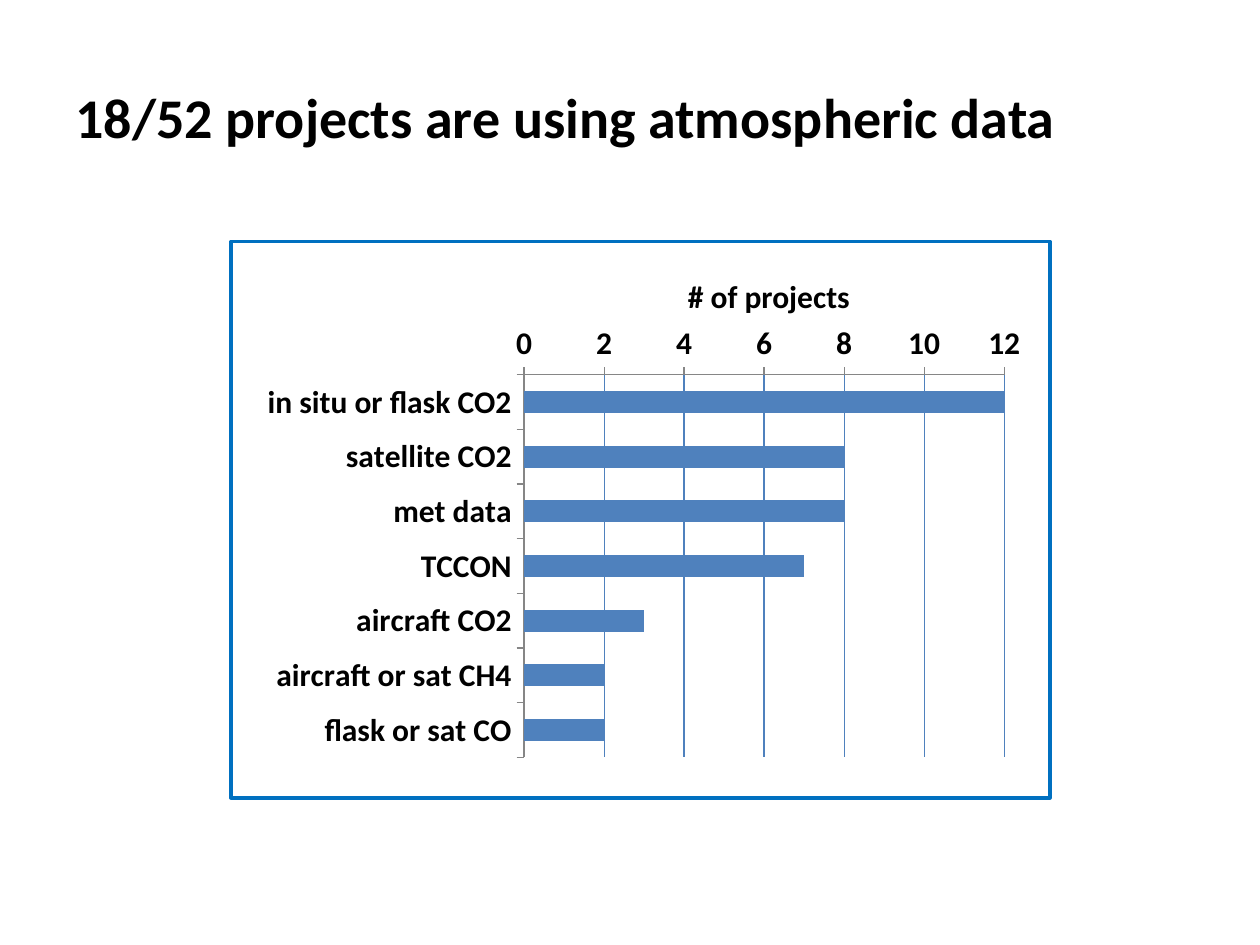
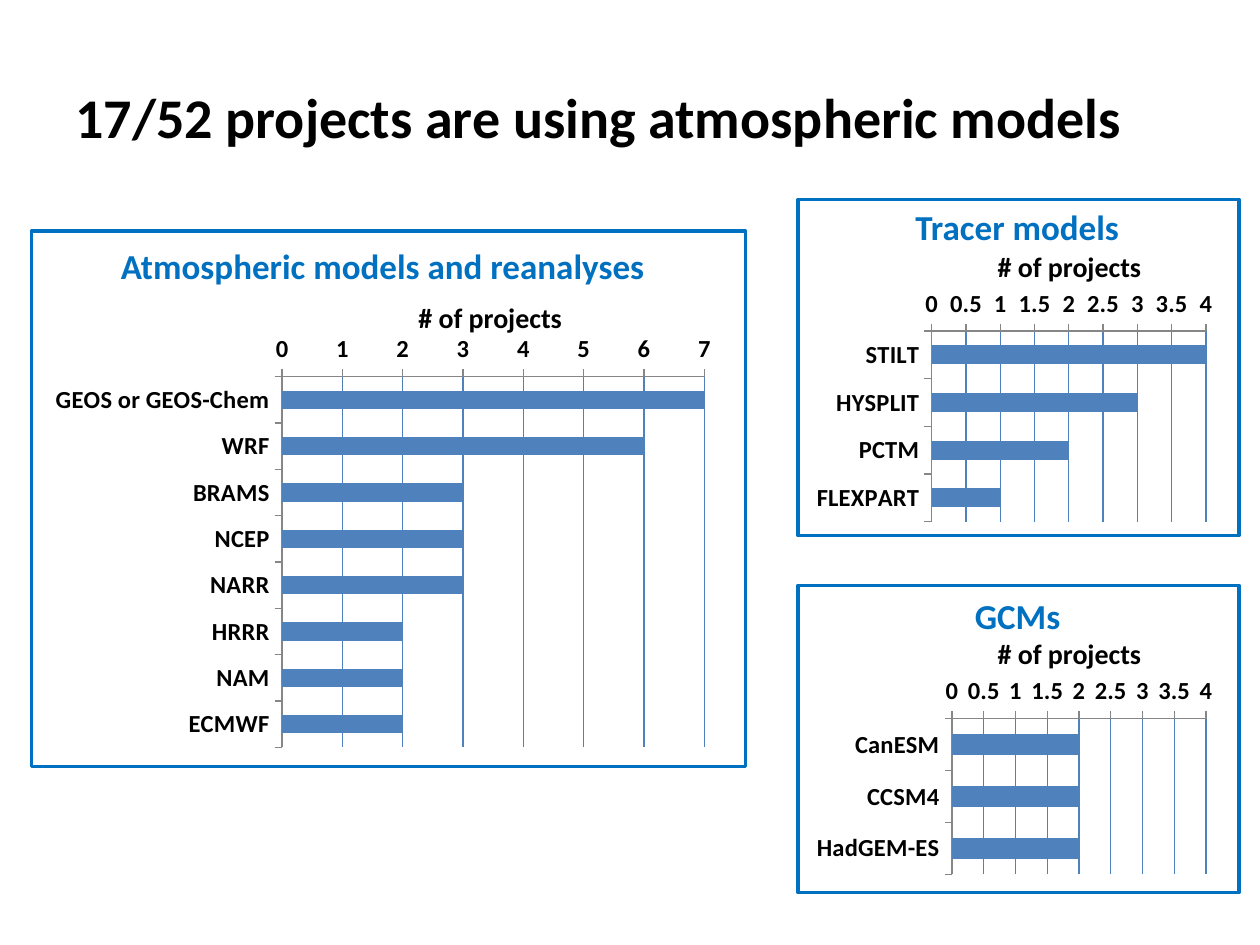
from pptx import Presentation
from pptx import util as u
from pptx.chart.data import CategoryChartData
from pptx.dml.color import RGBColor
from pptx.enum import chart as ch, shapes, text

COLORS = {"text": "000000", "frame": "0070C0", "bar": "4F81BD", "axis": "868686"}
FONT = "Calibri"
LABEL = "# of projects"


def rgb(name):
    return RGBColor.from_string(COLORS[name])


def assign(obj, **values):
    for name, value in values.items():
        setattr(obj, name, value)


class Deck:
    def __init__(self, width, height):
        self.prs = Presentation()
        assign(self.prs, slide_width=u.Pt(width), slide_height=u.Pt(height))
        self.s = None

    def slide(self, title):
        self.s = self.prs.slides.add_slide(self.prs.slide_layouts[6])
        self.text(title, (36, 21.6, 648, 90), 32, wrap=True,
                  anchor=text.MSO_ANCHOR.MIDDLE)

    def font(self, font, size, color="text", bold=True):
        assign(font, name=FONT, size=u.Pt(size), bold=bold)
        font.color.rgb = rgb(color)

    def text(self, words, box, size, color="text", wrap=False,
             anchor=text.MSO_ANCHOR.TOP):
        tf = self.s.shapes.add_textbox(*map(u.Pt, box)).text_frame
        fit = text.MSO_AUTO_SIZE.NONE if wrap else text.MSO_AUTO_SIZE.SHAPE_TO_FIT_TEXT
        assign(tf, word_wrap=wrap, vertical_anchor=anchor, auto_size=fit)
        r = tf.paragraphs[0].add_run()
        r.text = words
        self.font(r.font, size, color)

    def frame(self, box):
        sp = self.s.shapes.add_shape(shapes.MSO_SHAPE.RECTANGLE, *map(u.Pt, box))
        sp.shadow.inherit = False
        sp.fill.background()
        sp.line.color.rgb = rgb("frame")
        sp.line.width = u.Pt(2)

    def chart(self, counts, box, size, step):
        """Bar chart of project counts, first category on top."""
        data = CategoryChartData()
        data.categories = list(counts)
        data.add_series("Series 1", list(counts.values()))
        chart = self.s.shapes.add_chart(
            ch.XL_CHART_TYPE.BAR_CLUSTERED, *map(u.Pt, box), data).chart
        assign(chart, has_legend=False, has_title=False)
        self.font(chart.font, 10, bold=False)

        plot = chart.plots[0]
        assign(plot, gap_width=150, vary_by_categories=False)
        fill = plot.series[0].format.fill
        fill.solid()
        fill.fore_color.rgb = rgb("bar")

        cat, val = chart.category_axis, chart.value_axis
        for axis in (cat, val):
            assign(axis, major_tick_mark=ch.XL_TICK_MARK.OUTSIDE,
                   minor_tick_mark=ch.XL_TICK_MARK.NONE)
            self.font(axis.tick_labels.font, size)
            axis.format.line.color.rgb = rgb("axis")
            axis.format.line.width = u.Pt(0.75)
        assign(cat, reverse_order=True, has_major_gridlines=False)
        assign(val, minimum_scale=0, maximum_scale=max(4, *counts.values()),
               major_unit=step, has_major_gridlines=True)
        assign(val.tick_labels, number_format="General",
               number_format_is_linked=False)
        grid = val.major_gridlines.format.line
        grid.color.rgb = rgb("bar")
        grid.width = u.Pt(0.75)

    def panel(self, frame, chart, label, counts, step, heading=None,
              heading_box=None, sizes=(16, 14)):
        """Framed chart with an axis label and, if given, a heading."""
        label_size, tick_size = sizes
        self.chart(counts, chart, tick_size, step)
        if heading:
            self.text(heading, heading_box, 20, "frame")
        self.text(LABEL, label, label_size)
        self.frame(frame)


def main():
    deck = Deck(720, 540)

    deck.slide("18/52 projects are using atmospheric data")
    deck.panel(
        frame=(132, 138, 468, 318), chart=(144, 180, 448, 258),
        label=(386, 154.8, 108, 29), step=2, sizes=(18, 18),
        counts={"in situ or flask CO2": 12, "satellite CO2": 8, "met data": 8,
                "TCCON": 7, "aircraft CO2": 3, "aircraft or sat CH4": 2,
                "flask or sat CO": 2})

    deck.slide("17/52 projects are using atmospheric models")
    deck.panel(
        frame=(18, 132, 408, 306), chart=(24, 186, 390, 246),
        label=(232, 168, 98, 26.6), step=1,
        heading="Atmospheric models and reanalyses",
        heading_box=(62, 136, 316, 31.5),
        counts={"GEOS or GEOS-Chem": 7, "WRF": 6, "BRAMS": 3, "NCEP": 3,
                "NARR": 3, "HRRR": 2, "NAM": 2, "ECMWF": 2})
    deck.panel(
        frame=(456, 114, 252, 192), chart=(462, 162, 235.5, 139),
        label=(563, 139, 98, 26.6), step=0.5,
        heading="Tracer models", heading_box=(516, 114, 132, 31.5),
        counts={"STILT": 4, "HYSPLIT": 3, "PCTM": 2, "FLEXPART": 1})
    deck.panel(
        frame=(456, 334.5, 252, 175.5), chart=(462, 384, 235.5, 118),
        label=(563, 360, 98, 26.6), step=0.5,
        heading="GCMs", heading_box=(550, 336, 64, 31.5),
        counts={"CanESM": 2, "CCSM4": 2, "HadGEM-ES": 2})

    deck.prs.save("out.pptx")


if __name__ == "__main__":
    main()
